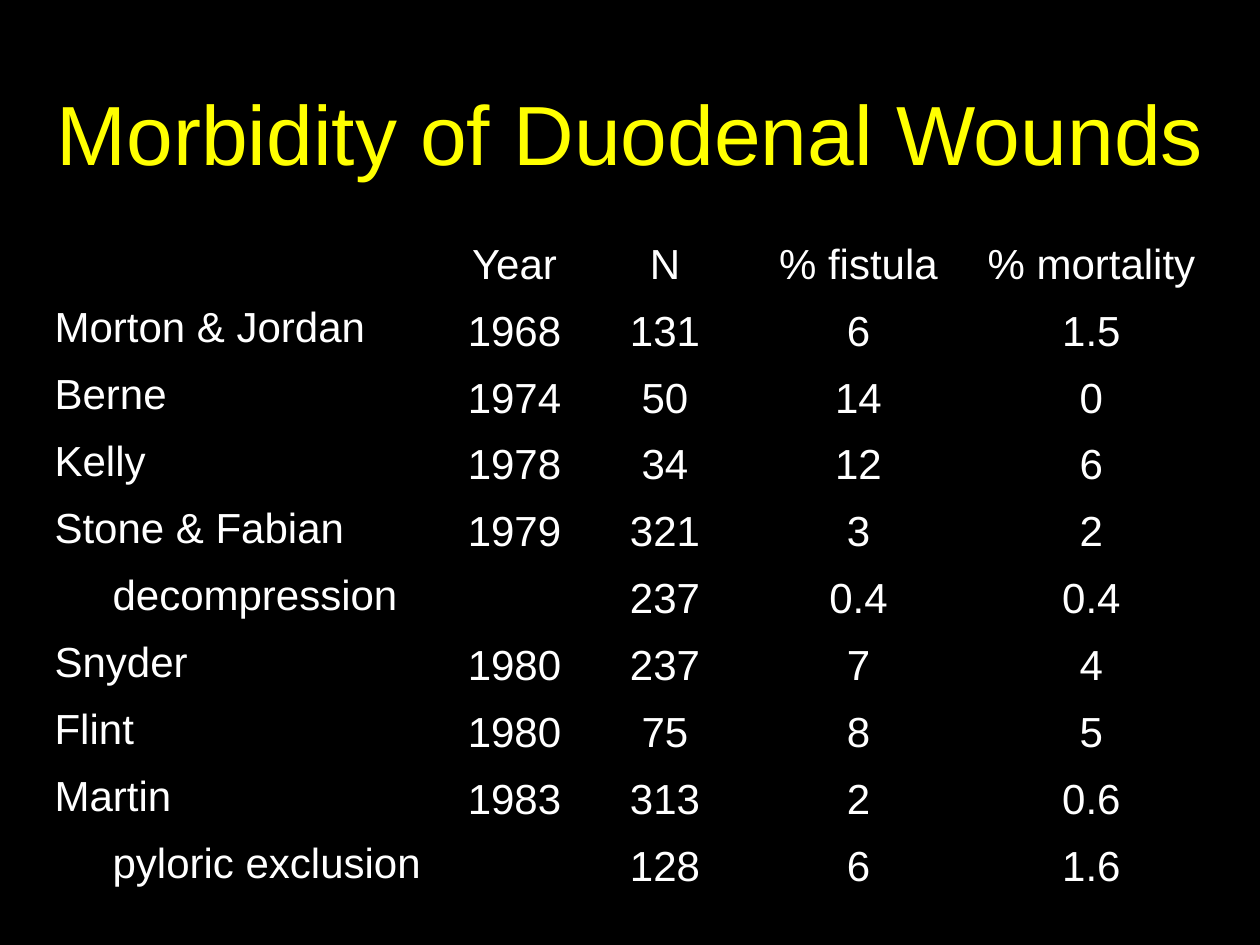
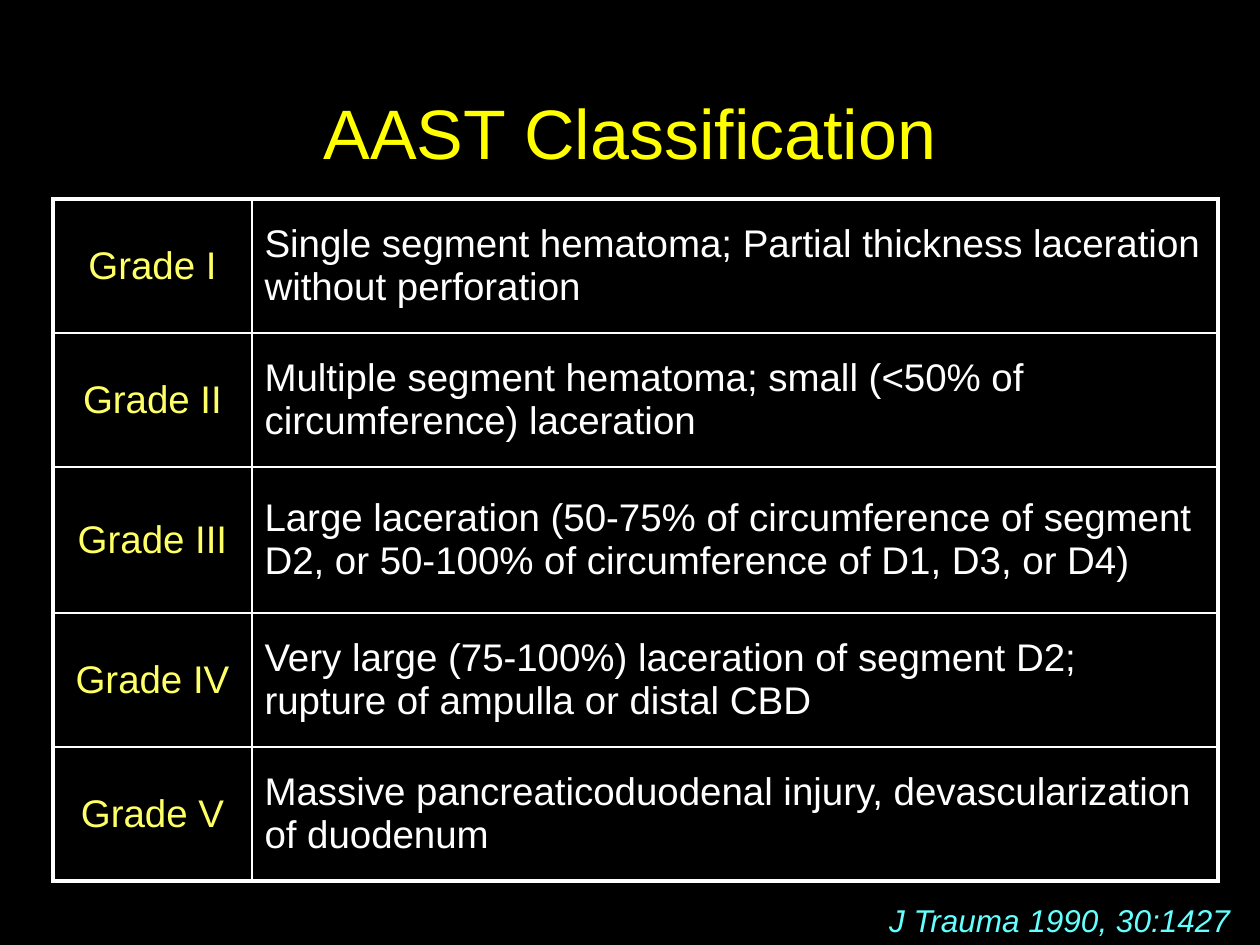
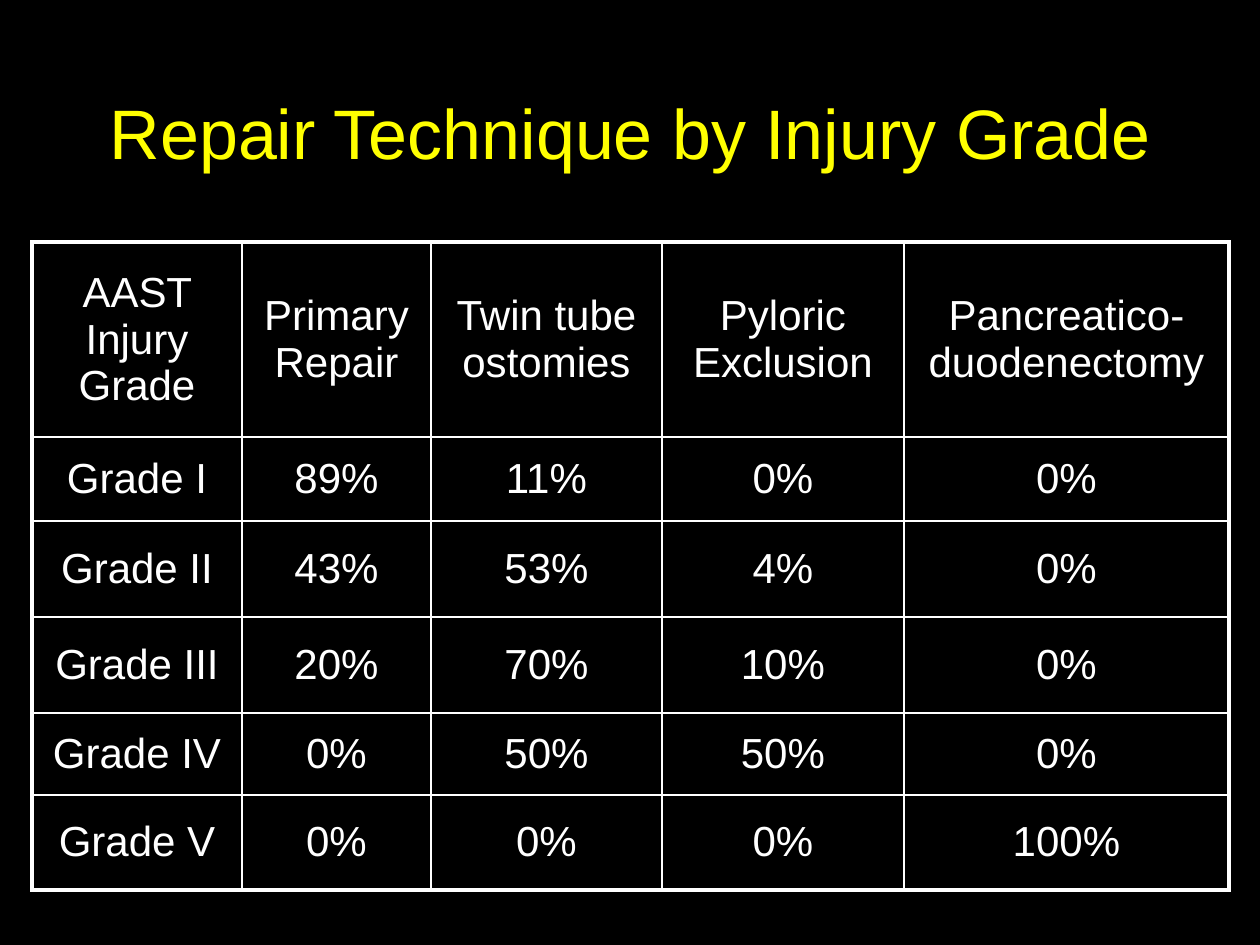
from dataclasses import dataclass

import pptx
import pptx.dml.color
import pptx.enum.text
import pptx.oxml
import pptx.oxml.ns
import pptx.util

SCALE = 914400 / 126  # EMU in one px
ALIGN = pptx.enum.text.PP_ALIGN
ANCHOR = pptx.enum.text.MSO_ANCHOR
NO_GRID = "{2D5ABB26-0587-4C30-8999-92F81FD0307C}"


@dataclass(frozen=True)
class Theme:
    font: str = "Arial"
    background: str = "000000"
    text: str = "FFFFFF"
    title: str = "FFFF00"
    grade: str = "FFFF66"
    citation: str = "66FFFF"
    title_large: int = 48
    title_size: int = 40
    table_size: int = 24
    grade_size: int = 22
    citation_size: int = 18
    outer_line: float = 2.25
    inner_line: float = 1


def px(n):
    return pptx.util.Emu(round(n * SCALE))


def rgb(color):
    return pptx.dml.color.RGBColor.from_string(color)


class Deck:
    """Holds the theme and the current slide."""

    def __init__(self, theme):
        self.theme = theme
        self.prs = pptx.Presentation()
        self.prs.slide_width, self.prs.slide_height = px(1260), px(945)
        fill = self.prs.slide_master.background.fill
        fill.solid()
        fill.fore_color.rgb = rgb(theme.background)
        self.slide = None

    def set_text(self, tf, text, size, color, align, italic=False):
        tf.text = text
        p = tf.paragraphs[0]
        p.alignment = align
        for r in p.runs:
            r.font.name = self.theme.font
            r.font.size = pptx.util.Pt(size)
            r.font.color.rgb = rgb(color)
            r.font.italic = italic
        return p

    def add_slide(self, title, size):
        self.slide = self.prs.slides.add_slide(self.prs.slide_layouts[5])
        sp = self.slide.shapes.title
        sp.left, sp.top, sp.width, sp.height = px(0), px(53), px(1260), px(157)
        tf = sp.text_frame
        tf.word_wrap = True
        tf.auto_size = pptx.enum.text.MSO_AUTO_SIZE.NONE
        tf.vertical_anchor = ANCHOR.MIDDLE
        self.set_text(tf, title, size, self.theme.title, ALIGN.CENTER)

    def add_table(self, left, top, widths, heights):
        sp = self.slide.shapes.add_table(
            len(heights), len(widths), px(left), px(top),
            px(sum(widths)), px(sum(heights)))
        table = sp.table
        table.first_row = table.horz_banding = False
        style = table._tbl.tblPr.find(pptx.oxml.ns.qn("a:tableStyleId"))
        style.text = NO_GRID
        for col, width in zip(table.columns, widths):
            col.width = px(width)
        for row, height in zip(table.rows, heights):
            row.height = px(height)
        return table

    def fill_cell(self, cell, text, size, color=None, align=ALIGN.CENTER,
                  anchor=ANCHOR.MIDDLE, indent=0):
        cell.vertical_anchor = anchor
        cell.fill.background()
        if text:
            p = self.set_text(cell.text_frame, text, size,
                              color or self.theme.text, align)
            if indent:
                p._p.get_or_add_pPr().set("marL", str(px(indent)))

    def add_grid(self, table):
        """Thin inner rules and a thicker frame, added before cell fills."""
        last_row, last_col = len(table.rows) - 1, len(table.columns) - 1
        for i, row in enumerate(table.rows):
            for j, cell in enumerate(row.cells):
                tc_pr = cell._tc.get_or_add_tcPr()
                edges = {"lnL": j == 0, "lnR": j == last_col,
                         "lnT": i == 0, "lnB": i == last_row}
                for tag, outer in edges.items():
                    width = (self.theme.outer_line if outer
                             else self.theme.inner_line)
                    tc_pr.append(pptx.oxml.parse_xml(
                        f'<a:{tag} {pptx.oxml.ns.nsdecls("a")} '
                        f'w="{pptx.util.Pt(width)}"><a:solidFill>'
                        f'<a:srgbClr val="{self.theme.text}"/>'
                        f'</a:solidFill></a:{tag}>'))

    def add_citation(self, text):
        sp = self.slide.shapes.add_textbox(px(829), px(895), px(431), px(50))
        tf = sp.text_frame
        tf.word_wrap = True
        tf.margin_right = px(30)
        self.set_text(tf, text, self.theme.citation_size, self.theme.citation,
                      ALIGN.RIGHT, italic=True)


MORBIDITY = [
    ("", "Year", "N", "% fistula", "% mortality"),
    ("Morton & Jordan", "1968", "131", "6", "1.5"),
    ("Berne", "1974", "50", "14", "0"),
    ("Kelly", "1978", "34", "12", "6"),
    ("Stone & Fabian", "1979", "321", "3", "2"),
    ("decompression", "", "237", "0.4", "0.4"),
    ("Snyder", "1980", "237", "7", "4"),
    ("Flint", "1980", "75", "8", "5"),
    ("Martin", "1983", "313", "2", "0.6"),
    ("pyloric exclusion", "", "128", "6", "1.6"),
]

GRADES = [
    ("Grade I", "Single segment hematoma; Partial thickness laceration "
                "without perforation"),
    ("Grade II", "Multiple segment hematoma; small (<50% of circumference) "
                 "laceration"),
    ("Grade III", "Large laceration (50-75% of circumference of segment D2, "
                  "or 50-100% of circumference of D1, D3, or D4)"),
    ("Grade IV", "Very large (75-100%) laceration of segment D2; "
                 "rupture of ampulla or distal CBD"),
    ("Grade V", "Massive pancreaticoduodenal injury, devascularization "
                "of duodenum"),
]

REPAIRS = [
    ("AAST Injury Grade", "Primary Repair", "Twin tube ostomies",
     "Pyloric Exclusion", "Pancreatico-duodenectomy"),
    ("Grade I", "89%", "11%", "0%", "0%"),
    ("Grade II", "43%", "53%", "4%", "0%"),
    ("Grade III", "20%", "70%", "10%", "0%"),
    ("Grade IV", "0%", "50%", "50%", "0%"),
    ("Grade V", "0%", "0%", "0%", "100%"),
]


def morbidity_slide(deck):
    theme = deck.theme
    deck.add_slide("Morbidity of Duodenal Wounds", theme.title_large)
    table = deck.add_table(42, 231, [399, 147, 154, 233, 233],
                           [67] * len(MORBIDITY))
    for i, (series, year, *values) in enumerate(MORBIDITY):
        # A row without a year is a subgroup of the series above it
        deck.fill_cell(table.cell(i, 0), series, theme.table_size,
                       align=ALIGN.LEFT, anchor=ANCHOR.TOP,
                       indent=0 if year else 58)
        for j, value in enumerate([year, *values], 1):
            deck.fill_cell(table.cell(i, j), value, theme.table_size)


def classification_slide(deck):
    theme = deck.theme
    deck.add_slide("AAST Classification", theme.title_size)
    table = deck.add_table(53, 199, [199, 966], [134, 134, 146, 134, 134])
    deck.add_grid(table)
    for i, (grade, injury) in enumerate(GRADES):
        deck.fill_cell(table.cell(i, 0), grade, theme.grade_size, theme.grade)
        deck.fill_cell(table.cell(i, 1), injury, theme.grade_size,
                       align=ALIGN.LEFT)
    deck.add_citation("J Trauma 1990, 30:1427")


def repair_slide(deck):
    theme = deck.theme
    deck.add_slide("Repair Technique by Injury Grade", theme.title_size)
    table = deck.add_table(32, 242, [210, 189, 231, 242, 325],
                           [195, 84, 96, 96, 82, 95])
    deck.add_grid(table)
    for i, row in enumerate(REPAIRS):
        for j, text in enumerate(row):
            deck.fill_cell(table.cell(i, j), text, theme.table_size)


def main():
    deck = Deck(Theme())
    morbidity_slide(deck)
    classification_slide(deck)
    repair_slide(deck)
    deck.prs.save("out.pptx")


if __name__ == "__main__":
    main()
